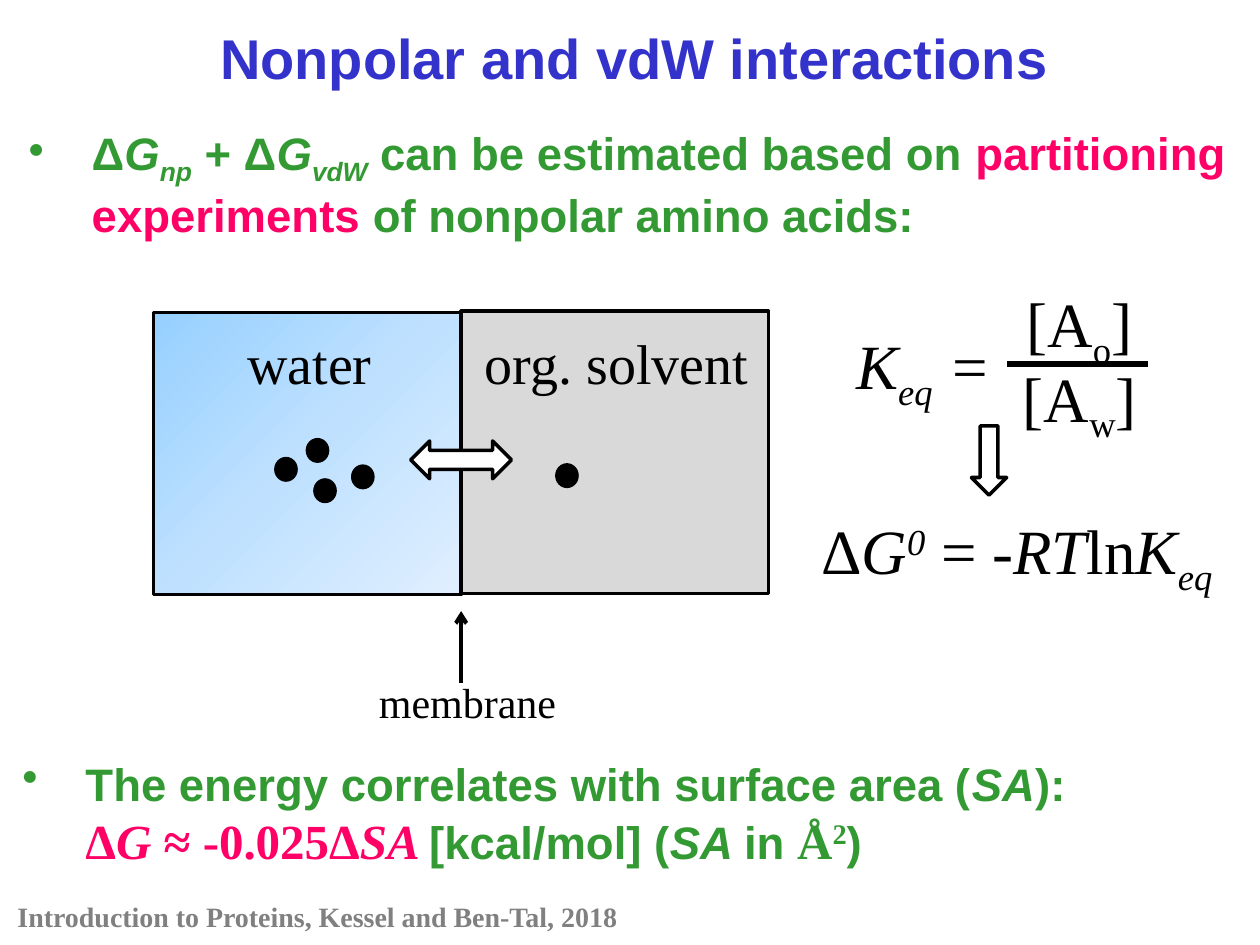
from copy import deepcopy
from dataclasses import dataclass
from typing import NamedTuple

from lxml.etree import SubElement
from pptx import Presentation
from pptx.dml.color import RGBColor
from pptx.enum.shapes import MSO_CONNECTOR as Link, MSO_SHAPE as Kind
from pptx.enum.text import MSO_AUTO_SIZE as Fit, PP_ALIGN as Align
from pptx.oxml.ns import qn
from pptx.util import Inches, Pt

BLACK, GREEN, PINK = "000000", "339933", "FF0066"
SUB, SUP = -25, 30


class Style(NamedTuple):
    size: int
    face: str = "Times New Roman"
    tint: str = BLACK
    bold: bool = False


class Run(NamedTuple):
    text: str
    style: Style
    slant: bool = False
    base: int = 0


@dataclass
class Label:
    box: tuple
    runs: list
    align: Align | None = None
    wrap: bool = False
    gap: bool = False
    bullet: bool = False
    rtl: bool = False


def color(code: str) -> RGBColor:
    return RGBColor.from_string(code)


def write(shapes, label: Label) -> None:
    frame = shapes.add_textbox(*map(Inches, label.box)).text_frame
    frame.word_wrap = label.wrap
    frame.auto_size = Fit.SHAPE_TO_FIT_TEXT
    para = frame.paragraphs[0]
    para.alignment = label.align
    props = para._p.get_or_add_pPr()
    if label.rtl:
        props.set("rtl", "1")
    if label.gap:
        space = SubElement(props, qn("a:spcBef"))
        SubElement(space, qn("a:spcPct")).set("val", "50000")
    if label.bullet:
        props.set("marL", str(Inches(0.5)))
        props.set("indent", str(Inches(-0.5)))
        SubElement(props, qn("a:buChar")).set("char", "•")
    for part in label.runs:
        run = para.add_run()
        run.text = part.text
        font, style = run.font, part.style
        font.size, font.name = Pt(style.size), style.face
        font.bold, font.italic = style.bold, part.slant
        font.color.rgb = color(style.tint)
        if part.base:
            run._r.get_or_add_rPr().set("baseline", str(part.base * 1000))


def draw(shapes, kind: Kind, box: tuple, fill: str | None = None):
    shape = shapes.add_shape(kind, *map(Inches, box))
    shape.shadow.inherit = False
    if fill:
        shape.fill.solid()
        shape.fill.fore_color.rgb = color(fill)
    else:
        shape.fill.background()
    shape.line.color.rgb = color(BLACK)
    shape.line.width = Pt(2)
    return shape


def blend(shape, tints: list[str]) -> None:
    """Fill with evenly spaced stops, from top left to bottom right."""
    shape.fill.gradient()
    shape.fill.gradient_angle = 315
    stops = shape._element.spPr.find(qn("a:gradFill")).find(qn("a:gsLst"))
    while len(stops) < len(tints):
        stops.append(deepcopy(stops[0]))
    for n, (stop, tint) in enumerate(zip(shape.fill.gradient_stops, tints)):
        stop.position = n / (len(tints) - 1)
        stop.color.rgb = color(tint)


def rule(shapes, start: tuple, end: tuple, width: float, head: bool = False) -> None:
    line = shapes.add_connector(Link.STRAIGHT, *map(Inches, start + end))
    line.line.color.rgb = color(BLACK)
    line.line.width = Pt(width)
    if head:
        SubElement(line.line._get_or_add_ln(), qn("a:tailEnd")).set("type", "arrow")
    SubElement(line._element.spPr, qn("a:effectLst"))


def ratio(sub: str) -> list[Run]:
    return [Run("[A", MATH), Run(sub, MATH, base=SUB), Run("]", MATH)]


# Text styles
TITLE = Style(32, "Arial", "3333CC", True)
BODY = Style(26, "Arial", GREEN, True)
KEY = Style(26, "Arial", PINK, True)
LAW = Style(28, tint=PINK, bold=True)
UNIT = Style(28, tint=GREEN, bold=True)
NOTE = Style(16, tint="808080", bold=True)
MATH, NAME, SMALL = Style(36), Style(32), Style(24)

deck = Presentation()
deck.slide_width, deck.slide_height = Inches(10), Inches(7.5)
page = deck.slides.add_slide(deck.slide_layouts[6]).shapes

# Footer, bullets, energy formula and title
for label in [
    Label((0.04, 7.09, 5.32, 0.37),
          [Run("Introduction to Proteins, Kessel and Ben-Tal, 2018", NOTE)], wrap=True),
    Label((0.13, 0.94, 9.73, 0.98), [
        Run("Δ", BODY), Run("G", BODY, True), Run("np", BODY, True, SUB),
        Run(" + Δ", BODY), Run("G", BODY, True), Run("vdW", BODY, True, SUB),
        Run(" can be estimated based on ", BODY),
        Run("partitioning experiments ", KEY),
        Run("of nonpolar amino acids:", BODY),
    ], wrap=True, gap=True, bullet=True),
    Label((6.37, 4.01, 3.4, 0.71), [
        Run("Δ", MATH), Run("G", MATH, True), Run("0", MATH, True, SUP),
        Run(" = -", MATH), Run("RT", MATH, True), Run("ln", MATH),
        Run("K", MATH, True), Run("eq", MATH, True, SUB),
    ], Align.CENTER),
    Label((0.08, 5.95, 8.72, 1.01), [
        Run("The energy correlates with surface area (", BODY),
        Run("SA", BODY, True), Run("): ", BODY),
        Run("Δ", LAW), Run("G", LAW, True), Run(" ≈ -0.025Δ", LAW),
        Run("SA ", LAW, True), Run("[kcal/mol] (", BODY),
        Run("SA ", BODY, True), Run("in ", BODY),
        Run("Å", UNIT), Run("2", UNIT, base=SUP), Run(")", BODY),
    ], wrap=True, gap=True, bullet=True),
    Label((0.31, 0.14, 9.45, 0.63), [Run("Nonpolar and vdW interactions", TITLE)],
          Align.CENTER, wrap=True, gap=True),
]:
    write(page, label)
draw(page, Kind.DOWN_ARROW, (7.71, 3.38, 0.28, 0.55))

# Two solvents with the solute between them
cell = page.add_group_shape().shapes
water = draw(cell, Kind.RECTANGLE, (1.22, 2.48, 2.44, 2.24))
blend(water, ["96D0FF", "BFE1FF", "E0EFFF"])
draw(cell, Kind.RECTANGLE, (3.66, 2.47, 2.44, 2.24), "D9D9D9")
for text, left, width in [("org. solvent", 3.73, 2.31), ("water", 1.85, 1.2)]:
    write(cell, Label((left, 2.56, width, 0.64), [Run(text, NAME)],
                      Align.RIGHT, rtl=True))
for left, top in [(2.44, 3.49), (2.19, 3.64), (2.5, 3.81), (2.8, 3.7), (4.42, 3.69)]:
    draw(cell, Kind.OVAL, (left, top, 0.16, 0.17), BLACK)
draw(cell, Kind.LEFT_RIGHT_ARROW, (3.26, 3.5, 0.8, 0.3), "FFFFFF")

# Membrane pointer
rule(page, (3.66, 5.42), (3.66, 4.85), 2.25, head=True)
write(page, Label((2.9, 5.32, 1.62, 0.5), [Run("membrane", SMALL)],
                  Align.CENTER, rtl=True))

# Equilibrium constant
keq = page.add_group_shape().shapes
for box, runs in [
    ((6.67, 2.54, 1.32, 0.71),
     [Run("K", MATH, True), Run("eq", MATH, True, SUB), Run(" =", MATH, True)]),
    ((8.02, 2.8, 1.1, 0.71), ratio("w")),
    ((8.03, 2.21, 1.07, 0.71), ratio("o")),
]:
    write(keq, Label(box, runs, Align.CENTER))
rule(keq, (9.11, 2.89), (7.99, 2.89), 3)

deck.save("out.pptx")
